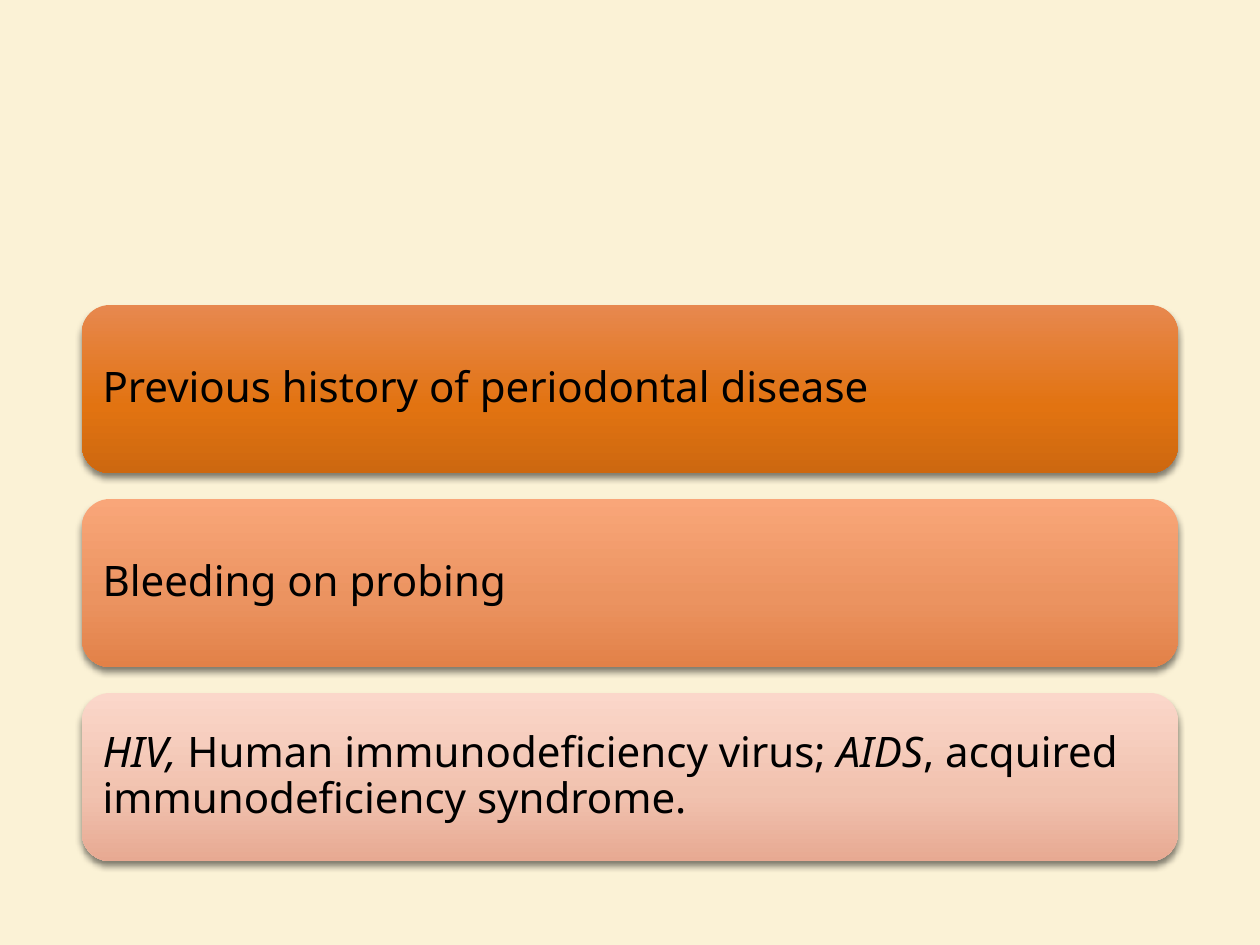
import pptx
import pptx.dml.color
import pptx.enum.shapes
import pptx.enum.text
import pptx.oxml
import pptx.oxml.ns
import pptx.util

SCALE = 914400 / 126
FONT = "Noto Sans"
CARDS = [
    ([("Previous history of periodontal disease", False)],
     ("E7884F", "E27311", "CD6810")),
    ([("Bleeding on probing", False)],
     ("F9A679", "EB9360", "E28148")),
    ([("HIV, ", True), ("Human immunodeficiency virus; ", False),
      ("AIDS", True), (", acquired immunodeficiency syndrome.", False)],
     ("FBD7CA", "F1C2AF", "E7A992")),
]


def px(length):
    return pptx.util.Emu(round(length * SCALE))


def color(value):
    return pptx.dml.color.RGBColor.from_string(value)


def set_gradient(box, colors):
    stops = "".join(
        f'<a:gs pos="{position}"><a:srgbClr val="{value}"/></a:gs>'
        for position, value in zip((0, 60000, 100000), colors))
    gradient = pptx.oxml.parse_xml(
        f'<a:gradFill {pptx.oxml.ns.nsdecls("a")} rotWithShape="1">'
        f'<a:gsLst>{stops}</a:gsLst><a:lin ang="5400000" scaled="0"/></a:gradFill>')
    box.fill.background()
    properties = box.element.spPr
    properties.replace(properties.find(pptx.oxml.ns.qn("a:noFill")), gradient)


def set_shadow(box):
    box.shadow.inherit = False
    effects = box.element.spPr.find(pptx.oxml.ns.qn("a:effectLst"))
    effects.append(pptx.oxml.parse_xml(
        f'<a:outerShdw {pptx.oxml.ns.nsdecls("a")} blurRad="50800" dist="31750" '
        'dir="5400000" rotWithShape="0"><a:srgbClr val="000000">'
        '<a:alpha val="47000"/></a:srgbClr></a:outerShdw>'))


def write_text(box, spans, size=24, ink="000000", spacing=0.9):
    frame = box.text_frame
    frame.word_wrap = True
    frame.vertical_anchor = pptx.enum.text.MSO_ANCHOR.MIDDLE
    frame.margin_left = frame.margin_right = pptx.util.Inches(0.1)
    frame.margin_top = frame.margin_bottom = pptx.util.Inches(0.1)
    para = frame.paragraphs[0]
    para.alignment = pptx.enum.text.PP_ALIGN.LEFT
    para.line_spacing = spacing
    for text, italic in spans:
        span = para.add_run()
        span.text = text
        span.font.name = FONT
        span.font.size = pptx.util.Pt(size)
        span.font.italic = italic
        span.font.color.rgb = color(ink)


def add_card(page, top, spans, colors):
    box = page.shapes.add_shape(
        pptx.enum.shapes.MSO_SHAPE.ROUNDED_RECTANGLE,
        px(82), px(top), px(1096), px(168))
    set_gradient(box, colors)
    box.line.fill.background()
    set_shadow(box)
    write_text(box, spans)


def main():
    deck = pptx.Presentation()
    deck.slide_width = px(1260)
    deck.slide_height = px(945)
    page = deck.slides.add_slide(deck.slide_layouts[6])
    page.background.fill.solid()
    page.background.fill.fore_color.rgb = color("FBF2D6")
    for index, (spans, colors) in enumerate(CARDS):
        add_card(page, 305 + 194 * index, spans, colors)
    deck.save("out.pptx")


if __name__ == "__main__":
    main()
